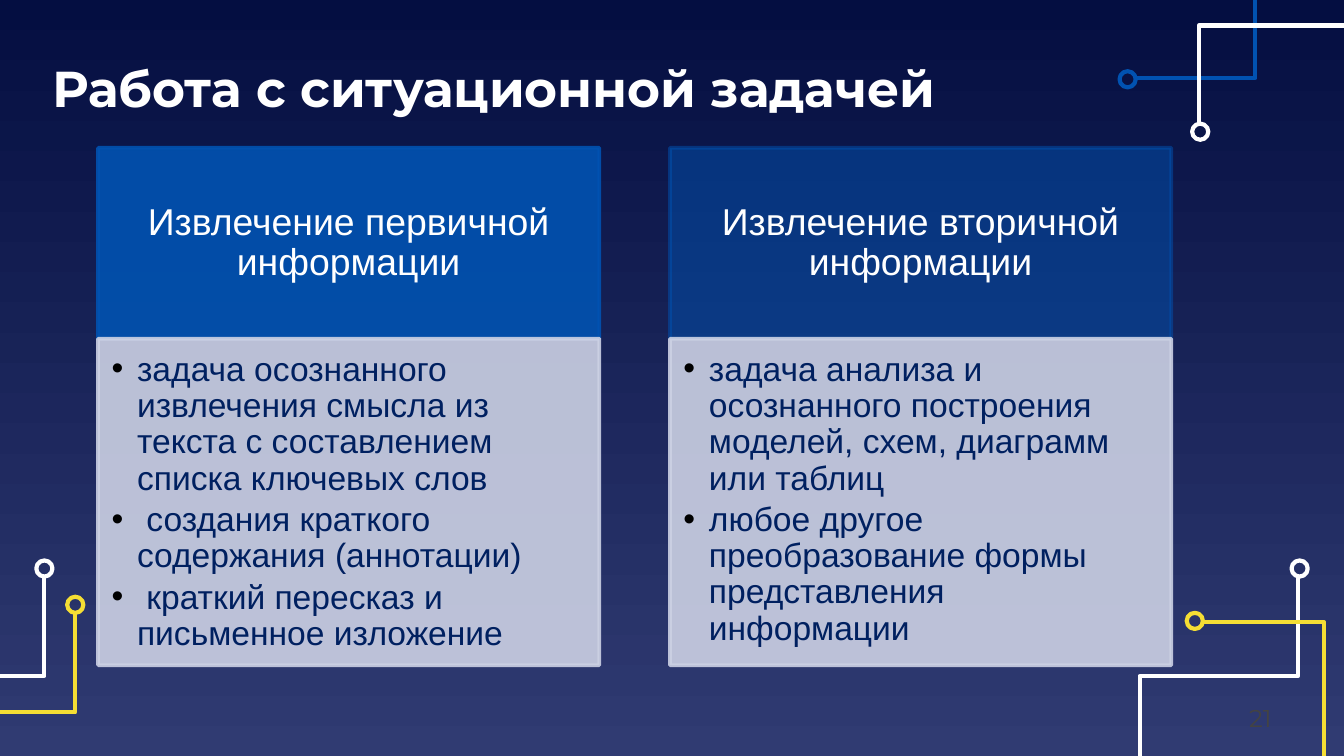
from lxml.etree import SubElement
from pptx import Presentation
from pptx.dml.color import RGBColor
from pptx.enum.shapes import MSO_SHAPE
from pptx.enum.text import MSO_ANCHOR, MSO_AUTO_SIZE, PP_ALIGN
from pptx.oxml.ns import qn
from pptx.util import Inches, Pt

INK = {
    "top": "040E41", "base": "303B72", "white": "FFFFFF", "blue": "0152B1",
    "gold": "F5DE34", "pale": "CCD1E4", "navy": "002060", "black": "000000",
    "grey": "434343",
}
RGB = {name: RGBColor.from_string(value) for name, value in INK.items()}

deck = Presentation()
deck.slide_width = Inches(10)
deck.slide_height = deck.slide_width * 9 // 16
cell = deck.slide_width // 100  # square grid, 100 columns wide
right, foot = 100, 56.25
slide = deck.slides.add_slide(deck.slide_layouts.get_by_name("Comparison"))

back = slide.background.fill
back.gradient()
back.gradient_angle = 270
for stop, name in zip(back.gradient_stops, ("top", "base")):
    stop.color.rgb = RGB[name]


def place(shape, box, pads, anchor):
    """Put a text shape on the grid; box and pads are in cells."""
    shape.left, shape.top, shape.width, shape.height = (round(n * cell) for n in box)
    frame = shape.text_frame
    frame.word_wrap = True
    frame.auto_size = MSO_AUTO_SIZE.NONE
    frame.vertical_anchor = anchor
    (frame.margin_left, frame.margin_top,
     frame.margin_right, frame.margin_bottom) = (round(n * cell) for n in pads)
    return frame


def style(para, size, color, font="Arial", bold=False, align=PP_ALIGN.LEFT):
    para.alignment = align
    para.space_before = Pt(0)
    for run in para.runs:
        run.font.size, run.font.name, run.font.bold = Pt(size), font, bold
        run.font.color.rgb = RGB[color]


# Circuit lines: colour, ring centre, bends
wires = [
    ("white", (96.7, 42.3), [(96.6, 42.8), (96.6, 50.3), (84.8, 50.3), (84.8, foot)]),
    ("blue", (83.9, 5.9), [(84.5, 5.8), (93.4, 5.8), (93.4, 0)]),
    ("white", (89.3, 9.8), [(89.2, 9.3), (89.2, 1.9), (right, 1.9)]),
    ("gold", (88.9, 46.2), [(89.4, 46.3), (98.5, 46.3), (98.5, foot)]),
    ("white", (3.3, 42.3), [(3.3, 42.8), (3.3, 50.3), (0, 50.3)]),
    ("gold", (5.6, 45), [(5.6, 45.5), (5.6, 53), (0, 53)]),
]
ring = 1.2
for color, (x, y), bends in wires:
    start, *rest = [(round(a * cell), round(b * cell)) for a, b in bends]
    pen = slide.shapes.build_freeform(*start)
    pen.add_line_segments(rest, close=False)
    dot = slide.shapes.add_shape(
        MSO_SHAPE.OVAL, *(round(n * cell) for n in (x - ring / 2, y - ring / 2, ring, ring)))
    for shape in (pen.convert_to_shape(), dot):
        shape.shadow.inherit = False
        shape.fill.background()
        shape.line.color.rgb = RGB[color]
        shape.line.width = Pt(2.25)

title = place(slide.shapes.title, (2.9, 3.9, 84.3, 5.2), (1, 1, 1, 1), MSO_ANCHOR.MIDDLE)
title.text = "Работа с ситуационной задачей"
style(title.paragraphs[0], 27, "white", "Montserrat", True)

# Two columns: heading, heading opacity, list
cards = [
    ("Извлечение первичной информации", 90, [
        "задача осознанного извлечения смысла из текста с составлением списка ключевых слов",
        " создания краткого содержания (аннотации)",
        " краткий пересказ и письменное изложение"]),
    ("Извлечение вторичной информации", 50, [
        "задача анализа и осознанного построения моделей, схем, диаграмм или таблиц",
        "любое другое преобразование формы представления информации"]),
]
left, top, wide, gap = 7.3, 11, 37.3, 5.25
high, deep = 14.2, 24.3
for i, (name, alpha, items) in enumerate(cards):
    x = left + i * (wide + gap)
    head, body = (slide.placeholders[2 * i + n] for n in (1, 2))
    for shape, color, share in ((head, "blue", alpha), (body, "pale", 90)):
        shape.fill.solid()
        shape.fill.fore_color.rgb = shape.line.color.rgb = RGB[color]
        shape.line.width = Pt(2)
        for tint in shape._element.spPr.iter(qn("a:srgbClr")):
            SubElement(tint, qn("a:alpha"), val=str(share * 1000))

    frame = place(head, (x, top, wide, high), (1.6, 0.9, 1.6, 0.9), MSO_ANCHOR.MIDDLE)
    frame.text = name
    style(frame.paragraphs[0], 20, "white", align=PP_ALIGN.CENTER)
    frame.paragraphs[0].line_spacing = 0.9

    frame = place(body, (x, top + high, wide, deep), (1, 1, 1.4, 1.6), MSO_ANCHOR.TOP)
    frame.text = "\n".join(items)
    for para in frame.paragraphs:
        style(para, 18, "navy")
        para.line_spacing = 0.9
        para.space_after = Pt(2.7)
        props = para._p.get_or_add_pPr()
        props.set("marL", str(round(1.9 * cell)))
        props.set("indent", str(round(-1.9 * cell)))
        SubElement(SubElement(props, qn("a:buClr")), qn("a:srgbClr"), val=INK["black"])
        SubElement(props, qn("a:buChar"), char="•")

page = place(slide.shapes.add_textbox(0, 0, 0, 0), (90, 51.4, 5.6, 4),
             (1, 0.5, 1, 0.5), MSO_ANCHOR.MIDDLE)
page.text = "21"
style(page.paragraphs[0], 13, "grey", "Montserrat", align=PP_ALIGN.RIGHT)

deck.save("out.pptx")
